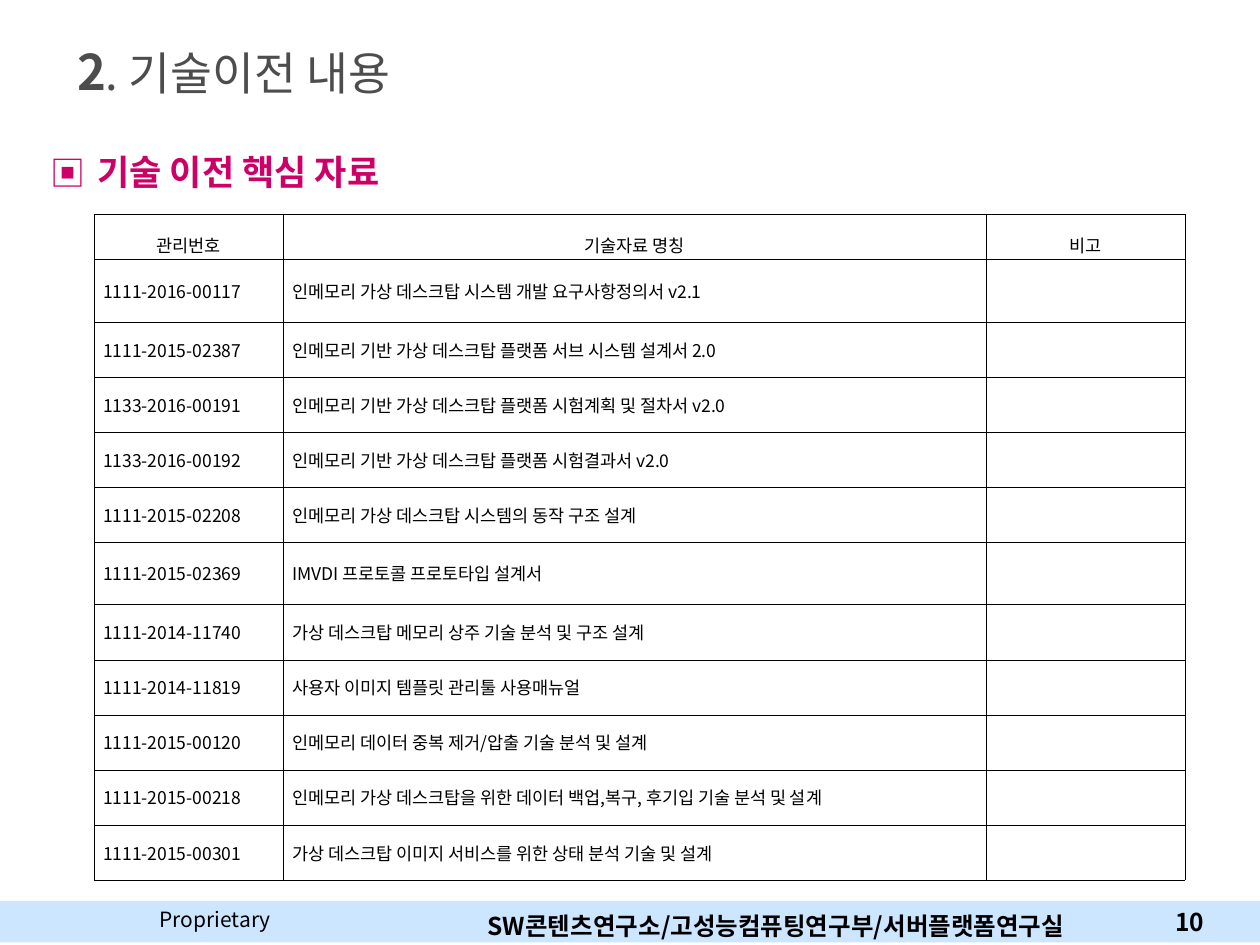
from lxml.etree import SubElement as Sub
from pptx import Presentation
from pptx.dml.color import RGBColor
from pptx.enum.shapes import MSO_SHAPE as Shape
from pptx.enum.text import MSO_ANCHOR as Anchor, MSO_AUTO_SIZE as Fit, PP_ALIGN as Align
from pptx.oxml.ns import qn
from pptx.util import Cm, Pt

SANS = "Noto Sans CJK KR"
SERIF = "Times New Roman"
BLACK = "000000"
PINK = "CC0066"

HEAD = ("관리번호", "기술자료 명칭", "비고")
DOCS = [
    ("1111-2016-00117", "인메모리 가상 데스크탑 시스템 개발 요구사항정의서 v2.1"),
    ("1111-2015-02387", "인메모리 기반 가상 데스크탑 플랫폼 서브 시스템 설계서 2.0"),
    ("1133-2016-00191", "인메모리 기반 가상 데스크탑 플랫폼 시험계획 및 절차서 v2.0"),
    ("1133-2016-00192", "인메모리 기반 가상 데스크탑 플랫폼 시험결과서 v2.0"),
    ("1111-2015-02208", "인메모리 가상 데스크탑 시스템의 동작 구조 설계"),
    ("1111-2015-02369", "IMVDI 프로토콜 프로토타입 설계서"),
    ("1111-2014-11740", "가상 데스크탑 메모리 상주 기술 분석 및 구조 설계"),
    ("1111-2014-11819", "사용자 이미지 템플릿 관리툴 사용매뉴얼"),
    ("1111-2015-00120", "인메모리 데이터 중복 제거/압출 기술 분석 및 설계"),
    ("1111-2015-00218", "인메모리 가상 데스크탑을 위한 데이터 백업,복구, 후기입 기술 분석 및 설계"),
    ("1111-2015-00301", "가상 데스크탑 이미지 서비스를 위한 상태 분석 기술 및 설계"),
]
WIDTHS = (3.81, 14.17, 4.01)
TALL = (1, 6)


def paint(fill, color):
    fill.solid()
    fill.fore_color.rgb = RGBColor.from_string(color)


def style(run, size, color=BLACK, bold=False, face=SANS):
    """Format a run; Korean glyphs always use the sans face."""
    font = run.font
    font.size, font.bold, font.name = Pt(size), bold, face
    paint(font.fill, color)
    Sub(run._r.get_or_add_rPr(), qn("a:ea"), typeface=SANS)


def place(item, left, top, width, height):
    item.left, item.top = Cm(left), Cm(top)
    item.width, item.height = Cm(width), Cm(height)


def add_title(slide):
    title = slide.shapes.title
    place(title, 1.3, 0.71, 21.59, 1.45)
    frame = title.text_frame
    frame.auto_size, frame.vertical_anchor = Fit.NONE, Anchor.MIDDLE
    para = frame.paragraphs[0]
    para.alignment = Align.LEFT
    for text, size, bold in (("2", 28, True), (". 기술이전 내용", 26, False)):
        run = para.add_run()
        run.text = text
        style(run, size, "4D4D4D", bold)


def add_bullet(para, mark, color, indent):
    props = para._p.get_or_add_pPr()
    props.set("marL", str(indent))
    props.set("indent", str(-indent))
    Sub(Sub(props, qn("a:buClr")), qn("a:srgbClr"), val=color)
    Sub(props, qn("a:buFont"), typeface=SANS)
    Sub(props, qn("a:buChar"), char=mark)


def add_body(slide):
    body = slide.placeholders[1]
    place(body, 0.76, 2.9, 20.75, 14.63)
    frame = body.text_frame
    frame.text = "기술 이전 핵심 자료"
    frame.auto_size = Fit.NONE
    para = frame.paragraphs[0]
    para.space_before = Pt(0)
    add_bullet(para, "▣", PINK, Cm(0.95))
    style(para.runs[0], 20, PINK, True, SERIF)


def add_border(cell):
    props = cell._tc.get_or_add_tcPr()
    for side in "LRTB":
        line = Sub(props, qn(f"a:ln{side}"), w=str(Pt(0.28)))
        Sub(Sub(line, qn("a:solidFill")), qn("a:srgbClr"), val=BLACK)


def fill_cell(cell, text, head):
    cell.margin_left = cell.margin_right = Cm(0.18)
    cell.margin_top = cell.margin_bottom = Cm(0.05)
    cell.vertical_anchor = Anchor.MIDDLE
    add_border(cell)
    paint(cell.fill, "FFFFFF")
    if not text:
        return
    cell.text_frame.text = text
    para = cell.text_frame.paragraphs[0]
    para.alignment = Align.CENTER if head else Align.JUSTIFY
    if head:
        para.line_spacing = 1.6
    style(para.runs[0], 10)


def add_grid(slide):
    rows = [HEAD] + [(*doc, "") for doc in DOCS]
    grid = slide.shapes.add_table(len(rows), len(HEAD), Cm(1.9), Cm(4.32),
                                  Cm(sum(WIDTHS)), Cm(13.42)).table
    grid.first_row = grid.horz_banding = False
    for col, width in zip(grid.columns, WIDTHS):
        col.width = Cm(width)
    for i, texts in enumerate(rows):
        grid.rows[i].height = Cm(0.91 if i == 0 else 1.26 if i in TALL else 1.11)
        for j, text in enumerate(texts):
            fill_cell(grid.cell(i, j), text, i == 0)


def add_bar(slide):
    bar = slide.shapes.add_shape(Shape.RECTANGLE, 0, Cm(18.16), Cm(25.4), Cm(0.84))
    bar.shadow.inherit = False
    paint(bar.fill, "CDE6FF")
    bar.line.fill.background()


def add_label(slide, text, box, size, bold=False, align=Align.LEFT, anchor=Anchor.TOP):
    label = slide.shapes.add_textbox(*map(Cm, box))
    frame = label.text_frame
    frame.text = text
    frame.word_wrap = True
    frame.vertical_anchor = anchor
    para = frame.paragraphs[0]
    para.alignment = align
    style(para.runs[0], size, bold=bold)


def main():
    deck = Presentation()
    deck.slide_width, deck.slide_height = Cm(25.4), Cm(19.05)
    slide = deck.slides.add_slide(deck.slide_layouts[1])
    add_bar(slide)
    add_label(slide, "Proprietary", (2.97, 18.16, 3.38, 0.76), 12)
    add_label(slide, "SW콘텐츠연구소/고성능컴퓨팅연구부/서버플랫폼연구실",
              (9.58, 18.24, 13.79, 0.86), 14, True)
    add_label(slide, "10", (23.34, 18.16, 1.19, 0.84), 14, True, Align.RIGHT, Anchor.MIDDLE)
    add_title(slide)
    add_body(slide)
    add_grid(slide)
    deck.save("out.pptx")


if __name__ == "__main__":
    main()
